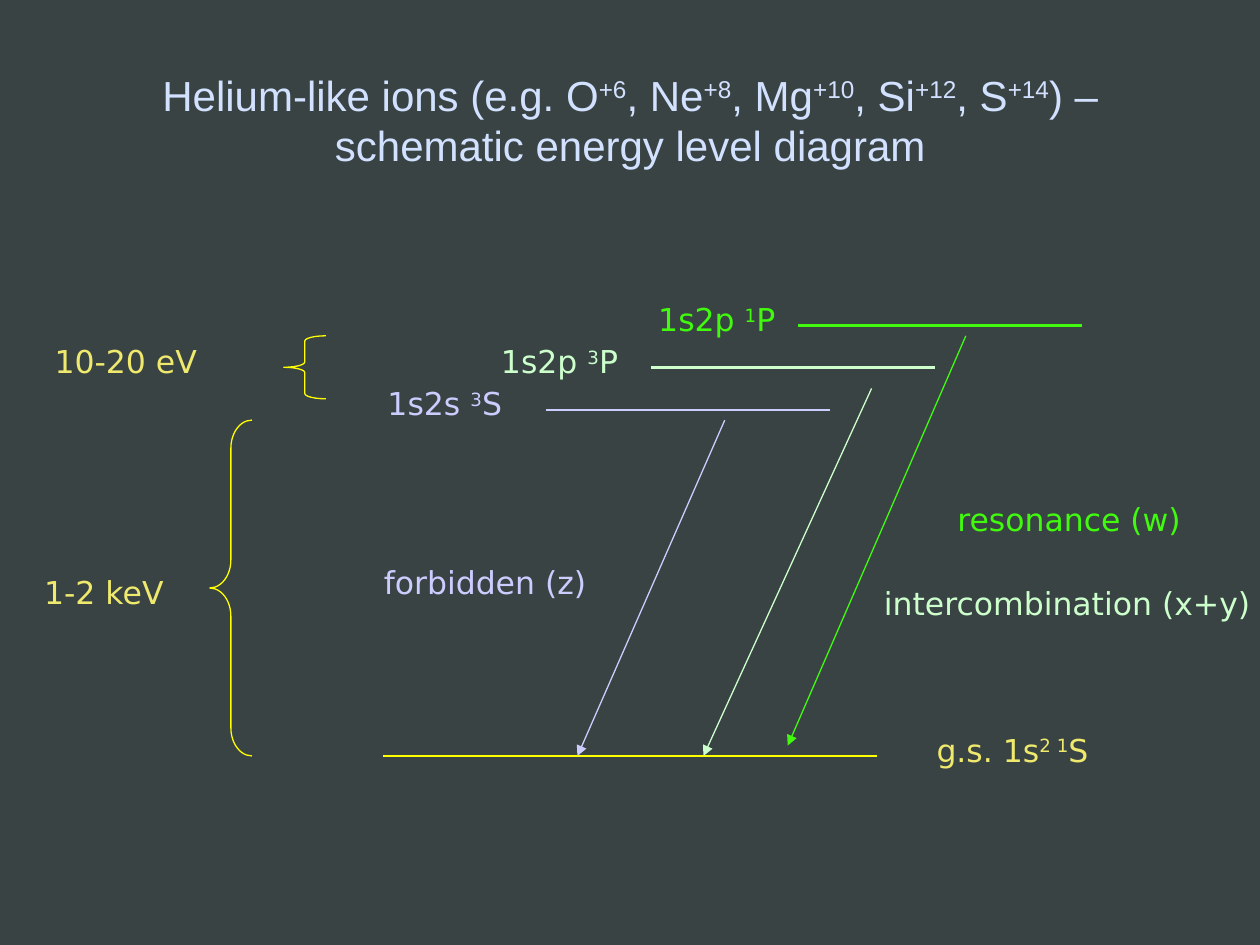
from lxml.etree import SubElement
from pptx import Presentation
from pptx.dml.color import RGBColor
from pptx.enum.shapes import MSO_CONNECTOR, MSO_SHAPE
from pptx.enum.text import MSO_ANCHOR, PP_ALIGN as Align
from pptx.oxml.ns import qn
from pptx.util import Cm, Pt

YELLOW, SAND, TITLE_BLUE = "FFFF00", "EFE96D", "D2E1FF"
LILAC, MINT, GREEN = "CCCCFF", "CCFFCC", "41FA0E"
GROUND_Y = 15.24
LEVEL_WIDTH = 5.72


def add_line(x1, y1, x2, y2, color, weight, arrow=False):
    line = slide.shapes.add_connector(
        MSO_CONNECTOR.STRAIGHT, Cm(x1), Cm(y1), Cm(x2), Cm(y2))
    line.line.color.rgb = RGBColor.from_string(color)
    line.line.width = Pt(weight)
    if arrow:
        SubElement(line.line._get_or_add_ln(), qn("a:tailEnd"), type="triangle")
    SubElement(line._element.spPr, qn("a:effectLst"))


def add_text(text, left, top, width, height, color, align, size=18, font="DejaVu Sans"):
    """Add a text box; parts between carets are superscript."""
    box = slide.shapes.add_textbox(Cm(left), Cm(top), Cm(width), Cm(height))
    frame = box.text_frame
    frame.word_wrap = True
    frame.vertical_anchor = MSO_ANCHOR.TOP
    paragraph = frame.paragraphs[0]
    paragraph.alignment = align
    for i, part in enumerate(text.split("^")):
        run = paragraph.add_run()
        run.text = part
        run.font.size = Pt(size)
        run.font.name = font
        run.font.color.rgb = RGBColor.from_string(color)
        if i % 2:
            run._r.get_or_add_rPr().set("baseline", "30000")


prs = Presentation()
prs.slide_width, prs.slide_height = Cm(25.4), Cm(19.05)
slide = prs.slides.add_slide(prs.slide_layouts[6])
slide.background.fill.solid()
slide.background.fill.fore_color.rgb = RGBColor.from_string("394343")

# Energy levels
add_line(7.72, GROUND_Y, 17.68, GROUND_Y, YELLOW, 1.25)
for x, y, color in [(11.01, 8.26, LILAC), (13.12, 7.41, MINT), (16.09, 6.56, GREEN)]:
    add_line(x, y, x + LEVEL_WIDTH, y, color, 1.25)

# Transitions
for x1, y1, x2, y2, color in [
    (19.47, 6.77, 15.88, 15.03, GREEN),
    (14.61, 8.47, 11.64, GROUND_Y, LILAC),
    (17.57, 7.83, 14.18, GROUND_Y, MINT),
]:
    add_line(x1, y1, x2, y2, color, 0.75, arrow=True)

# Energy gaps
for left, top, height, curve in [(4.23, 8.47, 6.77, 0.667), (5.72, 6.77, 1.27, 0.125)]:
    brace = slide.shapes.add_shape(
        MSO_SHAPE.LEFT_BRACE, Cm(left), Cm(top), Cm(0.85), Cm(height))
    brace.adjustments[0] = curve
    brace.adjustments[1] = 0.5
    brace.shadow.inherit = False
    brace.fill.background()
    brace.line.color.rgb = RGBColor.from_string(YELLOW)
    brace.line.width = Pt(0.75)

# Labels of levels, transitions and gaps
for text, left, top, width, color, align in [
    ("g.s. 1s^2 1^S", 18.63, 14.61, 5.5, SAND, Align.LEFT),
    ("1s2s ^3^S", 7.47, 7.62, 2.9, LILAC, Align.RIGHT),
    ("1s2p ^3^P", 9.53, 6.77, 3.18, MINT, Align.RIGHT),
    ("1s2p ^1^P", 12.7, 5.93, 3.18, GREEN, Align.RIGHT),
    ("resonance (w)", 19.05, 9.95, 5.93, GREEN, Align.LEFT),
    ("intercombination (x+y)", 17.57, 11.64, 9.31, MINT, Align.LEFT),
    ("forbidden (z)", 4.66, 11.22, 7.41, LILAC, Align.RIGHT),
    ("10-20 eV", 0.85, 6.77, 3.81, SAND, Align.LEFT),
    ("1-2 keV", 0.64, 11.43, 3.18, SAND, Align.LEFT),
]:
    add_text(text, left, top, width, 1.02, color, align)

add_text(
    "Helium-like ions (e.g. O^+6^, Ne^+8^, Mg^+10^, Si^+12^, S^+14^) – "
    "schematic energy level diagram",
    1.59, 1.27, 22.23, 2.31, TITLE_BLUE, Align.CENTER, size=24, font="Arial")

prs.save("out.pptx")
